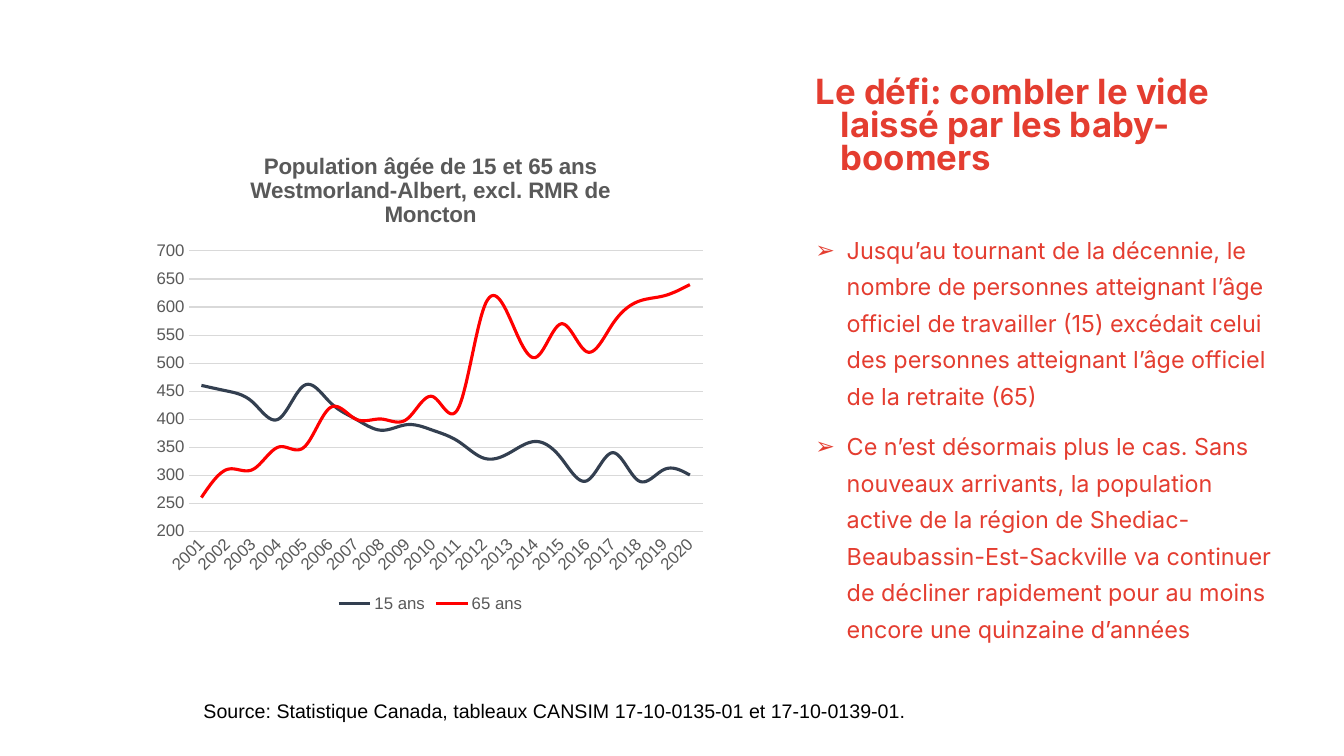
from dataclasses import dataclass

from lxml import etree
from pptx import Presentation
from pptx.chart.data import CategoryChartData
from pptx.dml.color import RGBColor
from pptx.enum.chart import XL_CHART_TYPE, XL_LEGEND_POSITION, XL_TICK_MARK
from pptx.enum.text import MSO_AUTO_SIZE
from pptx.oxml import parse_xml
from pptx.oxml.ns import nsdecls, qn
from pptx.util import Inches, Pt


@dataclass(frozen=True)
class Theme:
    accent: str = "E43D30"
    ink: str = "000000"
    grey: str = "595959"
    grid: str = "D9D9D9"
    young: str = "333F50"
    old: str = "FF0000"
    heading_font: str = "Inter"
    chart_font: str = "Arial"
    heading: float = 24.8
    body: float = 16.7
    source: float = 14
    chart_title: float = 16
    chart_text: float = 12


THEME = Theme()

YEARS = [str(year) for year in range(2001, 2021)]
AGE_15 = [460, 450, 430, 400, 460, 430, 400, 380, 390, 380,
          360, 330, 340, 360, 330, 290, 340, 290, 310, 300]
AGE_65 = [260, 310, 310, 350, 350, 420, 400, 400, 400, 440,
          420, 600, 580, 510, 570, 520, 570, 610, 620, 640]
POINTS = [
    "Jusqu’au tournant de la décennie, le nombre de personnes atteignant l’âge "
    "officiel de travailler (15) excédait celui des personnes atteignant l’âge "
    "officiel de la retraite (65)",
    "Ce n’est désormais plus le cas. Sans nouveaux arrivants, la population "
    "active de la région de Shediac-Beaubassin-Est-Sackville va continuer de "
    "décliner rapidement pour au moins encore une quinzaine d’années",
]


def style_font(font, size, color, name, bold=False):
    font.size, font.name, font.bold = Pt(size), name, bold
    font.color.rgb = RGBColor.from_string(color)


def style_line(line, color, width):
    line.color.rgb = RGBColor.from_string(color)
    line.width = Pt(width)


def add_frame(slide, box):
    tf = slide.shapes.add_textbox(*map(Inches, box)).text_frame
    tf.word_wrap = True
    return tf


def set_indent(p, left, hanging, bullet=None):
    pPr = p._p.get_or_add_pPr()
    pPr.set("marL", str(Inches(left)))
    pPr.set("indent", str(-Inches(hanging)))
    if bullet:
        color = etree.SubElement(pPr, qn("a:buClr"))
        etree.SubElement(color, qn("a:srgbClr"), val=THEME.accent)
        etree.SubElement(pPr, qn("a:buFont"), typeface=THEME.chart_font)
        etree.SubElement(pPr, qn("a:buChar"), char=bullet)


def add_heading(slide, box):
    p = add_frame(slide, box).paragraphs[0]
    set_indent(p, 0.5, 0.25)
    p.line_spacing = 0.8
    r = p.add_run()
    r.text = "Le défi: combler le vide laissé par les baby-boomers"
    style_font(r.font, THEME.heading, THEME.accent, THEME.heading_font, True)


def add_points(slide, box):
    tf = add_frame(slide, box)
    for i, text in enumerate(POINTS):
        p = tf.add_paragraph() if i else tf.paragraphs[0]
        set_indent(p, 0.56, 0.31, "➢")
        p.line_spacing = 1.3
        p.space_before = Pt(10 if i else 0)
        r = p.add_run()
        r.text = text
        style_font(r.font, THEME.body, THEME.accent, THEME.heading_font)


def add_source(slide, box):
    tf = add_frame(slide, box)
    tf.auto_size = MSO_AUTO_SIZE.SHAPE_TO_FIT_TEXT
    r = tf.paragraphs[0].add_run()
    r.text = ("Source: Statistique Canada, tableaux CANSIM "
              "17-10-0135-01 et 17-10-0139-01.")
    style_font(r.font, THEME.source, THEME.ink, THEME.chart_font)


def set_plot_layout(chart, box, plot_box):
    """Place the plot, given in inches inside the chart's box."""
    plot_area = chart._chartSpace.chart.plotArea
    for layout in plot_area.findall(qn("c:layout")):
        plot_area.remove(layout)
    width, height = box[2:]
    sizes = "".join(
        f'<c:{tag} val="{length / whole:.4f}"/>'
        for tag, length, whole in zip("xywh", plot_box, (width, height) * 2))
    plot_area.insert(0, parse_xml(
        f'<c:layout {nsdecls("c")}><c:manualLayout>'
        '<c:layoutTarget val="inner"/><c:xMode val="edge"/>'
        f'<c:yMode val="edge"/>{sizes}</c:manualLayout></c:layout>'))


def add_population_chart(slide, box):
    data = CategoryChartData(number_format="#,##0")
    data.categories = YEARS
    data.add_series("15 ans", AGE_15)
    data.add_series("65 ans", AGE_65)
    chart = slide.shapes.add_chart(
        XL_CHART_TYPE.LINE, *map(Inches, box), data).chart
    style_font(chart.font, THEME.chart_text, THEME.grey, THEME.chart_font)

    # Title
    chart.has_title = True
    tf = chart.chart_title.text_frame
    lines = ["Population âgée de 15 et 65 ans",
             "Westmorland-Albert, excl. RMR de Moncton"]
    for i, text in enumerate(lines):
        p = tf.add_paragraph() if i else tf.paragraphs[0]
        r = p.add_run()
        r.text = text
        style_font(r.font, THEME.chart_title, THEME.grey, THEME.chart_font, True)
    chart.chart_title.include_in_layout = False

    # Axes
    years, people = chart.category_axis, chart.value_axis
    for axis in (years, people):
        axis.major_tick_mark = axis.minor_tick_mark = XL_TICK_MARK.NONE
        style_font(axis.tick_labels.font, THEME.chart_text, THEME.grey,
                   THEME.chart_font)
    style_line(years.format.line, THEME.grid, 0.75)
    years._element.find(qn("c:txPr")).find(qn("a:bodyPr")).set("rot", "-2700000")
    people.minimum_scale, people.maximum_scale = 200, 700
    people.major_unit = 50
    people.format.line.fill.background()
    style_line(people.major_gridlines.format.line, THEME.grid, 0.75)
    people.tick_labels.number_format = "#,##0"
    people.tick_labels.number_format_is_linked = False

    # Series
    for series, color in zip(chart.plots[0].series, (THEME.young, THEME.old)):
        series.smooth = True
        style_line(series.format.line, color, 2.25)

    # Legend and plot area
    chart.has_legend = True
    chart.legend.position = XL_LEGEND_POSITION.BOTTOM
    chart.legend.include_in_layout = False
    style_font(chart.legend.font, THEME.chart_text, THEME.grey, THEME.chart_font)
    set_plot_layout(chart, box, (0.42, 1.16, 5.1, 2.78))


def main():
    prs = Presentation()
    prs.slide_width, prs.slide_height = Inches(13.33), Inches(7.5)
    slide = prs.slides.add_slide(prs.slide_layouts[6])
    add_heading(slide, (7.74, 0.72, 5.09, 1.3))
    add_points(slide, (7.74, 2.21, 5.04, 4.57))
    add_source(slide, (1.92, 6.88, 9.36, 0.34))
    add_population_chart(slide, (1.45, 1.33, 5.64, 4.79))
    prs.save("out.pptx")


if __name__ == "__main__":
    main()
